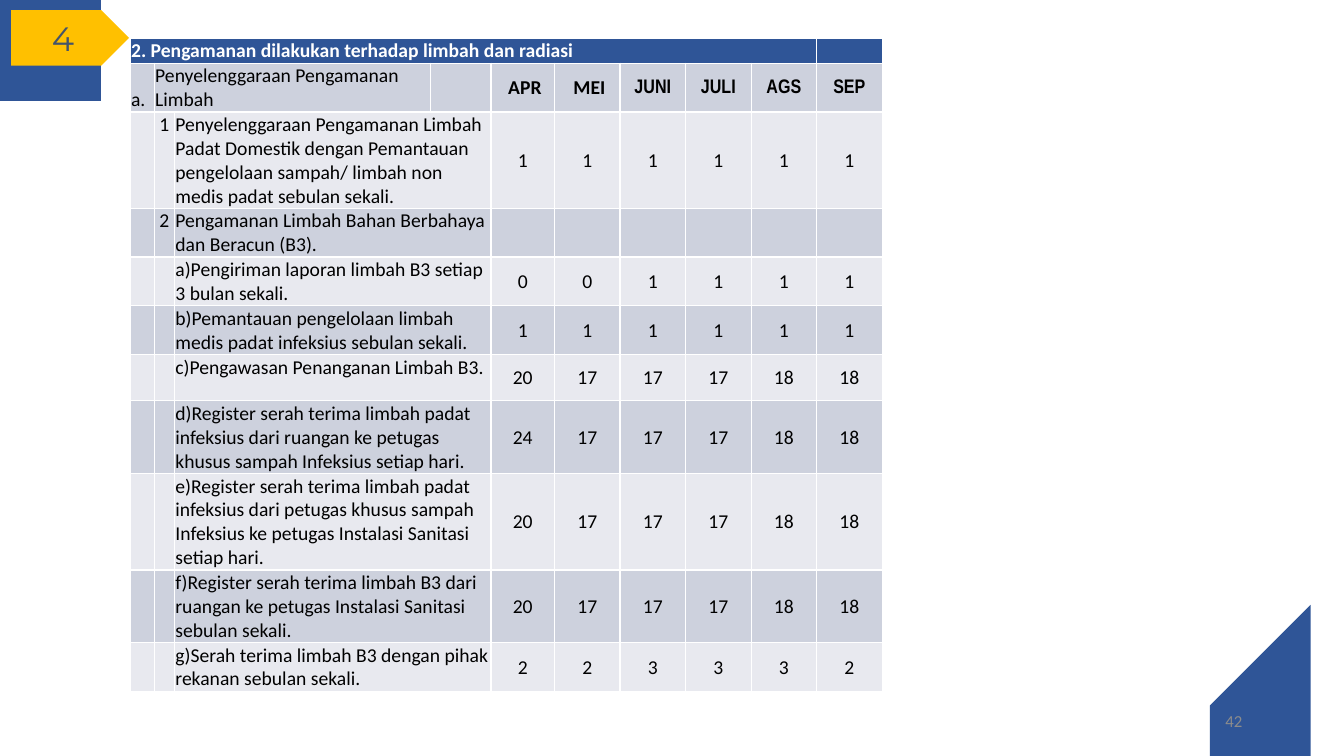
from lxml import etree
from pptx import Presentation
from pptx.dml.color import RGBColor
from pptx.enum.shapes import MSO_SHAPE as Shape
from pptx.enum.text import MSO_ANCHOR as Anchor, PP_ALIGN as Align
from pptx.oxml.ns import qn
from pptx.util import Inches, Pt

COLORS = {"blue": "2F5597", "gold": "FFC000", "slate": "44546A", "gray": "8C8C8C",
          "white": "FFFFFF", "black": "000000", "dark band": "CDD1DD", "light band": "E8E9EF"}

COLUMN_WIDTHS = [0.24, 0.2, 2.54, 0.6, 0.63] + [0.65] * 5
ROW_HEIGHTS = [0.19, 0.3, 0.68] + [0.46] * 4 + [0.68, 0.68, 0.49, 0.49]
FIRST_MONTH = 4
MONTHS = [(" APR", "Calibri"), (" MEI", "Calibri"), ("JUNI", "Arial Narrow"),
          ("JULI", "Arial Narrow"), ("AGS", "Arial Narrow"), ("SEP", "Arial Narrow")]
ACTIVITIES = [
    ("1", "Penyelenggaraan Pengamanan Limbah Padat Domestik dengan Pemantauan "
          "pengelolaan sampah/ limbah non medis padat sebulan sekali.", [1] * 6),
    ("2", "Pengamanan Limbah Bahan Berbahaya dan Beracun (B3).", []),
    ("", "a)Pengiriman laporan limbah B3 setiap 3 bulan sekali.", [0, 0, 1, 1, 1, 1]),
    ("", "b)Pemantauan pengelolaan limbah medis padat infeksius sebulan sekali.", [1] * 6),
    ("", "c)Pengawasan Penanganan Limbah B3.", [20, 17, 17, 17, 18, 18]),
    ("", "d)Register serah terima limbah padat infeksius dari ruangan ke petugas "
         "khusus sampah Infeksius setiap hari.", [24, 17, 17, 17, 18, 18]),
    ("", "e)Register serah terima limbah padat infeksius dari petugas khusus sampah "
         "Infeksius ke petugas Instalasi Sanitasi setiap hari.", [20, 17, 17, 17, 18, 18]),
    ("", "f)Register serah terima limbah B3 dari ruangan ke petugas Instalasi "
         "Sanitasi sebulan sekali.", [20, 17, 17, 17, 18, 18]),
    ("", "g)Serah terima limbah B3 dengan pihak rekanan sebulan sekali.", [2, 2, 3, 3, 3, 2]),
]


def bezier(start, control1, control2, end, steps=24):
    """Points along a cubic curve, both ends included."""
    points = []
    for step in range(steps + 1):
        t = step / steps
        weights = ((1 - t) ** 3, 3 * t * (1 - t) ** 2, 3 * t ** 2 * (1 - t), t ** 3)
        points.append(tuple(sum(w * p[axis] for w, p in zip(
            weights, (start, control1, control2, end))) for axis in (0, 1)))
    return points


class SlideBuilder:
    def __init__(self, slide, font="Calibri"):
        self.slide = slide
        self.font = font

    def paint(self, shape, color):
        shape.shadow.inherit = False
        shape.fill.solid()
        shape.fill.fore_color.rgb = RGBColor.from_string(COLORS[color])
        shape.line.fill.background()

    def set_text(self, frame, text, size, color, align=Align.LEFT, font=None, bold=False):
        paragraph = frame.paragraphs[0]
        paragraph.text = text
        paragraph.alignment = align
        paragraph.font.name = font or self.font
        paragraph.font.size = Pt(size)
        paragraph.font.bold = bold
        paragraph.font.color.rgb = RGBColor.from_string(COLORS[color])

    def outline(self, points, color):
        builder = self.slide.shapes.build_freeform(*points[0], scale=Inches(1))
        builder.add_line_segments(points[1:], close=True)
        self.paint(builder.convert_to_shape(), color)

    def badge(self, text, left, top, width, height):
        badge = self.slide.shapes.add_shape(
            Shape.PENTAGON, Inches(left), Inches(top), Inches(width), Inches(height))
        self.paint(badge, "gold")
        badge.text_frame.vertical_anchor = Anchor.MIDDLE
        self.set_text(badge.text_frame, text, 24.1, "slate", Align.CENTER, "Montserrat")

    def label(self, text, left, top, width, height):
        frame = self.slide.shapes.add_textbox(
            Inches(left), Inches(top), Inches(width), Inches(height)).text_frame
        frame.word_wrap = True
        frame.vertical_anchor = Anchor.MIDDLE
        self.set_text(frame, text, 12, "gray", Align.RIGHT)

    def fill_cell(self, cell, fill):
        """Colour an empty cell and keep its blank line as low as the text lines."""
        cell.fill.solid()
        cell.fill.fore_color.rgb = RGBColor.from_string(COLORS[fill])
        cell.margin_left = cell.margin_top = cell.margin_right = Inches(0.01)
        cell.margin_bottom = 0
        etree.SubElement(cell.text_frame.paragraphs[0]._p, qn("a:endParaRPr"), sz="1400")

    def cell_text(self, cell, text, anchor=Anchor.TOP, color="black", **style):
        cell.vertical_anchor = anchor
        self.set_text(cell.text_frame, text, 14, color, **style)

    def table(self, left, top, width, height):
        graphic = self.slide.shapes.add_table(
            len(ROW_HEIGHTS), len(COLUMN_WIDTHS),
            Inches(left), Inches(top), Inches(width), Inches(height))
        table = graphic.table
        for column, column_width in zip(table.columns, COLUMN_WIDTHS):
            column.width = Inches(column_width)
        for row, row_height in zip(table.rows, ROW_HEIGHTS):
            row.height = Inches(row_height)
        graphic.height = Inches(height)
        for index, row in enumerate(table.rows):
            band = "blue" if index == 0 else "dark band" if index % 2 else "light band"
            for cell in row.cells:
                self.fill_cell(cell, band)

        table.cell(0, 0).merge(table.cell(0, 8))
        self.cell_text(table.cell(0, 0), "2. Pengamanan dilakukan terhadap limbah dan radiasi",
                       Anchor.BOTTOM, "white", bold=True)
        table.cell(1, 1).merge(table.cell(1, 2))
        self.cell_text(table.cell(1, 0), "a.", Anchor.BOTTOM)
        self.cell_text(table.cell(1, 1), "Penyelenggaraan Pengamanan Limbah")
        for column, (month, font) in enumerate(MONTHS, FIRST_MONTH):
            self.cell_text(table.cell(1, column), month, Anchor.MIDDLE,
                           align=Align.CENTER, font=font, bold=True)

        for row, (number, activity, counts) in enumerate(ACTIVITIES, 2):
            table.cell(row, 2).merge(table.cell(row, 3))
            if number:
                self.cell_text(table.cell(row, 1), number, align=Align.CENTER)
            self.cell_text(table.cell(row, 2), activity)
            for column, count in enumerate(counts, FIRST_MONTH):
                self.cell_text(table.cell(row, column), str(count),
                               Anchor.MIDDLE, align=Align.CENTER)


def main():
    deck = Presentation()
    deck.slide_width, deck.slide_height = Inches(13.33), Inches(7.5)
    page = SlideBuilder(deck.slides.add_slide(deck.slide_layouts[6]))
    page.outline([(13.33, 7.5), (12.11, 7.5)]
                 + bezier((12.04, 7.36), (11.9, 7.06), (12.03, 6.69), (12.34, 6.55))
                 + [(13.32, 6.09)], "blue")
    page.outline([(0, 0), (1.22, 0)]
                 + bezier((1.29, 0.15), (1.43, 0.46), (1.29, 0.83), (0.99, 0.97))
                 + [(0, 1.42)], "blue")
    page.badge("4", 0.11, 0.1, 1.17, 0.55)
    page.table(1.29, 0.38, 7.48, 6.4)
    page.label("42", 9.42, 6.95, 3, 0.4)
    deck.save("out.pptx")


if __name__ == "__main__":
    main()
